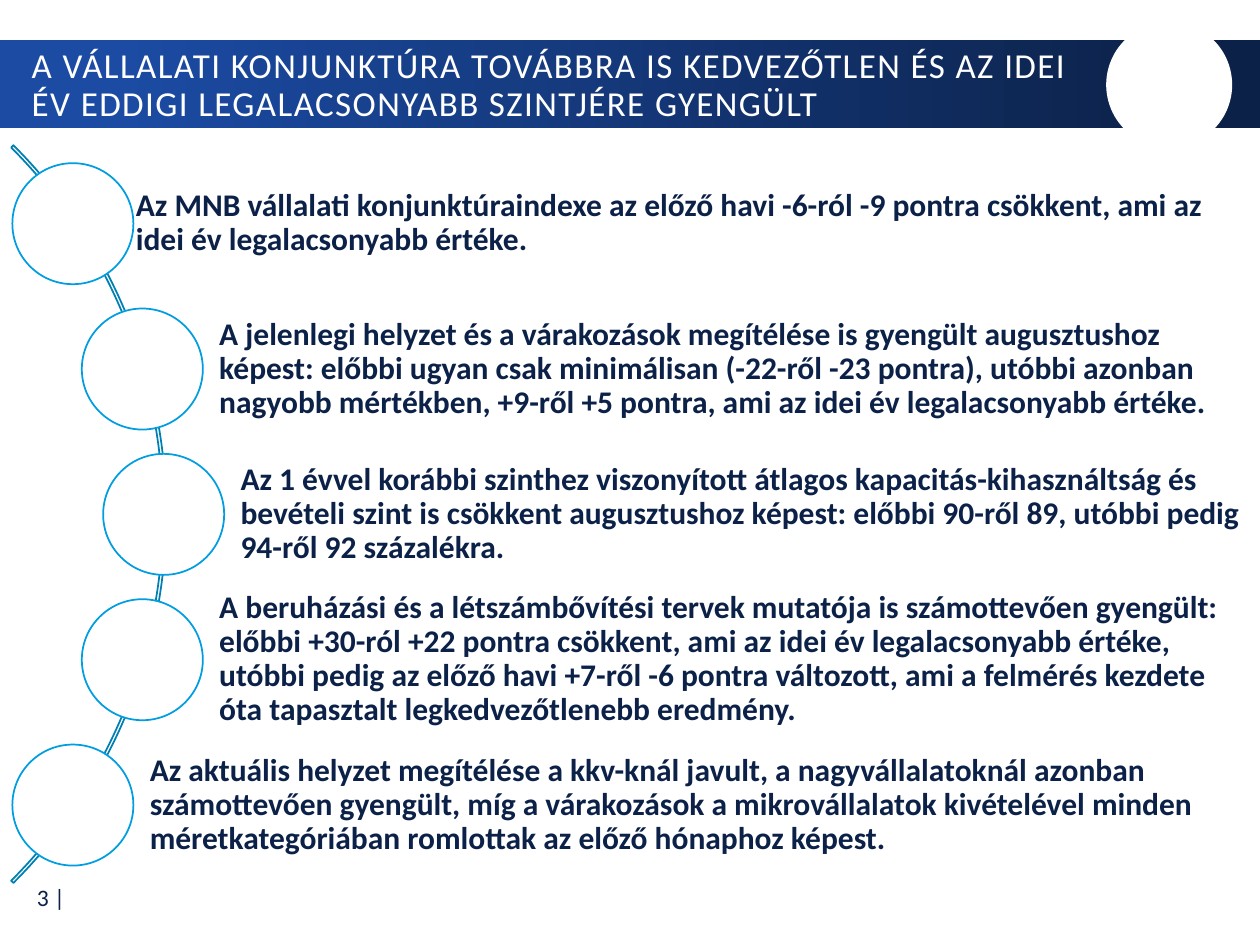
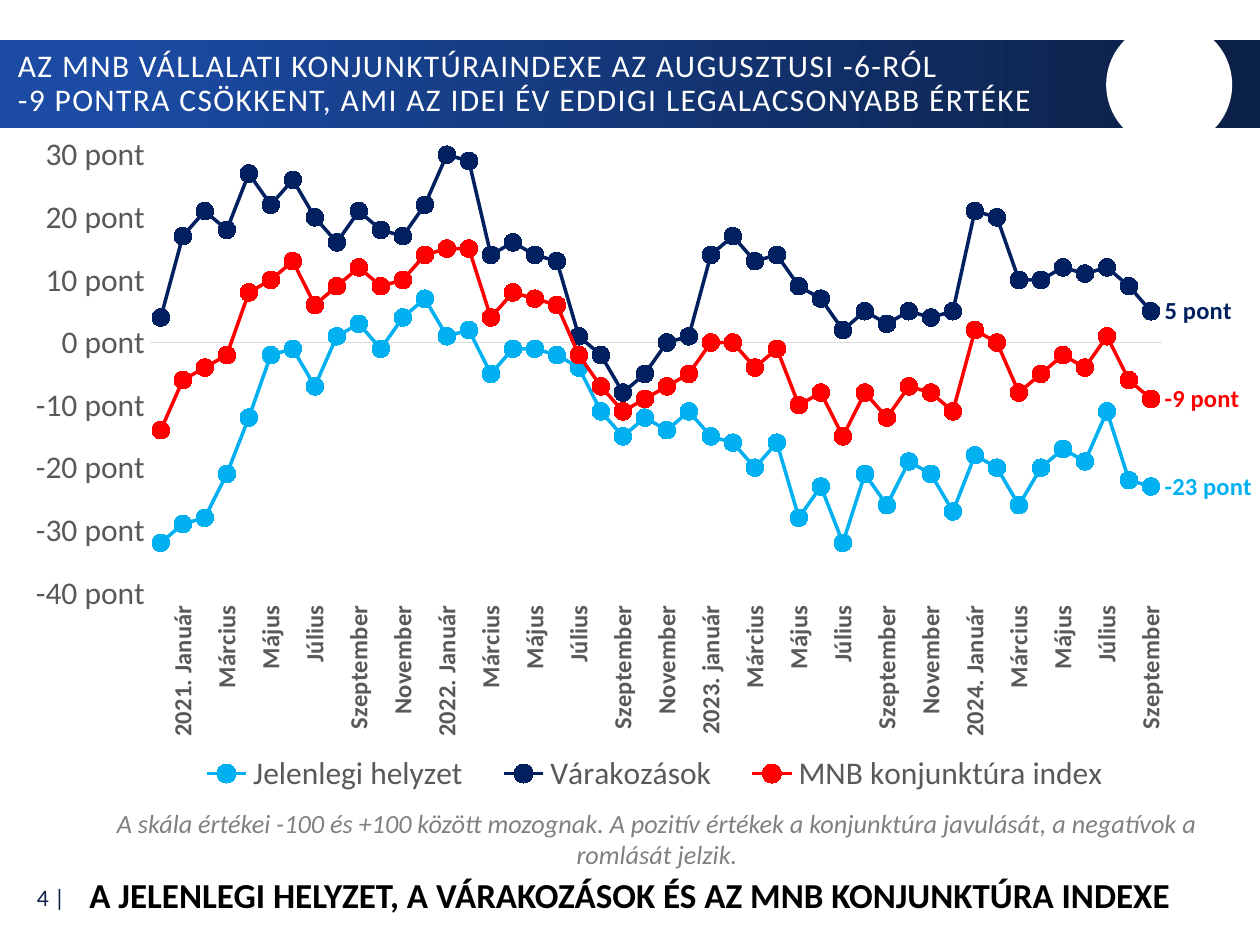
"""Build two slides on the monthly business climate index."""
import lxml.etree
import pptx
import pptx.chart.data
import pptx.dml.color
import pptx.enum.chart
import pptx.enum.shapes
import pptx.enum.text
import pptx.oxml.ns
import pptx.util

Cm, Pt = pptx.util.Cm, pptx.util.Pt
RGBColor = pptx.dml.color.RGBColor
MSO_SHAPE = pptx.enum.shapes.MSO_SHAPE
PP_ALIGN = pptx.enum.text.PP_ALIGN
qn = pptx.oxml.ns.qn

WHITE = RGBColor(0xFF, 0xFF, 0xFF)
BLACK = RGBColor(0, 0, 0)
NAVY = RGBColor(0x0C, 0x21, 0x48)
ROYAL = RGBColor(0x1B, 0x4B, 0xA3)
ARC_BLUE = RGBColor(0x00, 0x7F, 0xB3)
RING_BLUE = RGBColor(0x00, 0x9E, 0xE0)
GREY = RGBColor(0x80, 0x80, 0x80)
AXIS_TEXT = RGBColor(0x59, 0x59, 0x59)
AXIS_LINE = RGBColor(0xD9, 0xD9, 0xD9)
SKY = RGBColor(0x00, 0xB0, 0xF0)
DEEP_BLUE = RGBColor(0x00, 0x20, 0x60)
RED = RGBColor(0xFF, 0, 0)
FONT = "Calibri"

SUMMARY_TITLE = (
    "A VÁLLALATI KONJUNKTÚRA TOVÁBBRA IS KEDVEZŐTLEN ÉS AZ IDEI ÉV EDDIGI "
    "LEGALACSONYABB SZINTJÉRE GYENGÜLT")
FINDINGS = [
    "Az MNB vállalati konjunktúraindexe az előző havi -6-ról -9 pontra csökkent, "
    "ami az idei év legalacsonyabb értéke.",
    "A jelenlegi helyzet és a várakozások megítélése is gyengült augusztushoz képest: "
    "előbbi ugyan csak minimálisan (-22-ről -23 pontra), utóbbi azonban nagyobb "
    "mértékben, +9-ről +5 pontra, ami az idei év legalacsonyabb értéke.",
    "Az 1 évvel korábbi szinthez viszonyított átlagos kapacitás-kihasználtság és "
    "bevételi szint is csökkent augusztushoz képest: előbbi 90-ről 89, utóbbi pedig "
    "94-ről 92 százalékra.",
    "A beruházási és a létszámbővítési tervek mutatója is számottevően gyengült: előbbi "
    "+30-ról +22 pontra csökkent, ami az idei év legalacsonyabb értéke, utóbbi pedig az "
    "előző havi +7-ről -6 pontra változott, ami a felmérés kezdete óta tapasztalt "
    "legkedvezőtlenebb eredmény.",
    "Az aktuális helyzet megítélése a kkv-knál javult, a nagyvállalatoknál azonban "
    "számottevően gyengült, míg a várakozások a mikrovállalatok kivételével minden "
    "méretkategóriában romlottak az előző hónaphoz képest.",
]
RING_CENTERS = [1.47, 2.87, 3.3, 2.87, 1.47]
RING_TOP, RING_SIZE, RING_PITCH = 3.29, 2.44, 2.93
FINDING_HEIGHT, FINDING_RIGHT = 2.9, 25.17

INDEX_TITLE = (
    "AZ MNB VÁLLALATI KONJUNKTÚRAINDEXE AZ AUGUSZTUSI -6-RÓL\v"
    "-9 PONTRA CSÖKKENT, AMI AZ IDEI ÉV EDDIGI LEGALACSONYABB ÉRTÉKE")
INDEX_CAPTION = "A JELENLEGI HELYZET, A VÁRAKOZÁSOK ÉS AZ MNB KONJUNKTÚRA INDEXE"
SCALE_NOTE = (
    "A skála értékei -100 és +100 között mozognak. A pozitív értékek a konjunktúra "
    "javulását, a negatívok a romlását jelzik.")
LATER_MONTHS = ["Március", "Május", "Július", "Szeptember", "November"]
MONTHS = [
    "2021. Január", *LATER_MONTHS, "2022. Január", *LATER_MONTHS,
    "2023. január", *LATER_MONTHS, "2024. Január", *LATER_MONTHS[:4],
]
INDICES = [
    ("Jelenlegi helyzet", SKY, [
        -32, -29, -28, -21, -12, -2, -1, -7, 1, 3, -1, 4, 7, 1, 2, -5, -1, -1, -2, -4,
        -11, -15, -12, -14, -11, -15, -16, -20, -16, -28, -23, -32, -21, -26, -19, -21,
        -27, -18, -20, -26, -20, -17, -19, -11, -22, -23]),
    ("Várakozások", DEEP_BLUE, [
        4, 17, 21, 18, 27, 22, 26, 20, 16, 21, 18, 17, 22, 30, 29, 14, 16, 14, 13, 1,
        -2, -8, -5, 0, 1, 14, 17, 13, 14, 9, 7, 2, 5, 3, 5, 4, 5, 21, 20, 10, 10, 12,
        11, 12, 9, 5]),
    ("MNB konjunktúra index", RED, [
        -14, -6, -4, -2, 8, 10, 13, 6, 9, 12, 9, 10, 14, 15, 15, 4, 8, 7, 6, -2, -7,
        -11, -9, -7, -5, 0, 0, -4, -1, -10, -8, -15, -8, -12, -7, -8, -11, 2, 0, -8,
        -5, -2, -4, 1, -6, -9]),
]
PLOT_AREA = {"layoutTarget": "inner", "xMode": "edge", "yMode": "edge",
             "x": 0.119, "y": 0.042, "w": 0.804, "h": 0.65}
LEGEND_AREA = {"xMode": "edge", "yMode": "edge", "x": 0.14, "y": 0.92, "w": 0.76, "h": 0.08}


def lengths(*values):
    return [Cm(value) for value in values]


def style_font(font, size, color, bold=False, italic=False):
    font.name, font.size, font.bold, font.italic = FONT, Pt(size), bold, italic
    font.color.rgb = color


def write(frame, text, size, color, align=PP_ALIGN.LEFT, bold=False, italic=False,
          middle=False, line_spacing=None, tracking=None, sides=(0.25, 0.25)):
    frame.word_wrap = True
    frame.auto_size = pptx.enum.text.MSO_AUTO_SIZE.NONE
    anchors = pptx.enum.text.MSO_ANCHOR
    frame.vertical_anchor = anchors.MIDDLE if middle else anchors.TOP
    frame.margin_left, frame.margin_right = lengths(*sides)
    frame.margin_top = frame.margin_bottom = 0
    paragraph = frame.paragraphs[0]
    paragraph.text = text
    paragraph.alignment = align
    paragraph.line_spacing = line_spacing
    for run in paragraph.runs:
        style_font(run.font, size, color, bold, italic)
        if tracking:
            run.font._element.set("spc", str(tracking))


def add_box(slide, place, text, size, color, **style):
    box = slide.shapes.add_textbox(*lengths(*place))
    write(box.text_frame, text, size, color, **style)


def add_plain(slide, kind, place, fill=None, line=None):
    shape = slide.shapes.add_shape(kind, *lengths(*place))
    shape.shadow.inherit = False
    if fill is None:
        shape.fill.background()
    else:
        shape.fill.solid()
        shape.fill.fore_color.rgb = fill
    if line is None:
        shape.line.fill.background()
    else:
        shape.line.color.rgb = line
        shape.line.width = Pt(1)
    return shape


def add_page(deck, number, heading, size, place):
    slide = deck.slides.add_slide(deck.slide_layouts[5])
    add_box(slide, (0.04, 17.62, 1.52, 0.94), f"{number} |", 13.5, NAVY,
            align=PP_ALIGN.RIGHT, middle=True)
    band = add_plain(slide, MSO_SHAPE.RECTANGLE, (0, 0.81, 25.4, 1.78))
    band.fill.gradient()
    band.fill.gradient_angle = 0
    for stop, color, position in zip(band.fill.gradient_stops, (ROYAL, NAVY), (0.09, 0.95)):
        stop.color.rgb = color
        stop.position = position
    add_plain(slide, MSO_SHAPE.OVAL, (22.3, 0.44, 2.54, 2.54), WHITE)
    title = slide.shapes.title
    title.left, title.top, title.width, title.height = lengths(*place)
    write(title.text_frame, heading, size, WHITE, middle=True, line_spacing=0.9, tracking=80)
    slide.shapes._spTree.append(title._element)
    return slide


def add_findings(slide):
    arc = add_plain(slide, MSO_SHAPE.BLOCK_ARC, (-17.68, -0.15, 21.03, 21.03), line=ARC_BLUE)
    for index, value in enumerate((189, 27, 0.003)):
        arc.adjustments[index] = value
    for row, (center, finding) in enumerate(zip(RING_CENTERS, FINDINGS)):
        top = RING_TOP + row * RING_PITCH
        add_plain(slide, MSO_SHAPE.OVAL, (center - RING_SIZE / 2, top, RING_SIZE, RING_SIZE),
                  WHITE, RING_BLUE)
        inset = 1.55 if row else 1.27
        add_box(slide, (center + inset, top + (RING_SIZE - FINDING_HEIGHT) / 2,
                        FINDING_RIGHT - center - inset, FINDING_HEIGHT),
                finding, 18, NAVY, bold=True, middle=True, line_spacing=0.9, sides=(0, 0.13))


def add_layout(parent, position, settings):
    for automatic in parent.findall(qn("c:layout")):
        parent.remove(automatic)
    layout = lxml.etree.Element(qn("c:layout"))
    parent.insert(position, layout)
    manual = lxml.etree.SubElement(layout, qn("c:manualLayout"))
    for tag, value in settings.items():
        lxml.etree.SubElement(manual, qn(f"c:{tag}")).set("val", str(value))


def style_axes(chart):
    months, points = chart.category_axis, chart.value_axis
    for axis, size, bold in ((months, 14, True), (points, 18, False)):
        axis.has_major_gridlines = False
        axis.major_tick_mark = axis.minor_tick_mark = pptx.enum.chart.XL_TICK_MARK.NONE
        style_font(axis.tick_labels.font, size, AXIS_TEXT, bold)
    months.tick_label_position = pptx.enum.chart.XL_TICK_LABEL_POSITION.LOW
    months.format.line.color.rgb = AXIS_LINE
    months.format.line.width = Pt(0.75)
    months._element.find(qn("c:txPr")).find(qn("a:bodyPr")).set("rot", "-5400000")
    skip = lxml.etree.Element(qn("c:tickLblSkip"))
    skip.set("val", "1")
    months._element.find(qn("c:noMultiLvlLbl")).addprevious(skip)
    points.minimum_scale, points.maximum_scale, points.major_unit = -40, 30, 10
    points.format.line.fill.background()


def add_index_chart(slide):
    data = pptx.chart.data.CategoryChartData(number_format='General\\ "pont"')
    data.categories = [label for month in MONTHS for label in ("", month)]
    for name, _, values in INDICES:
        data.add_series(name, values)
    chart = slide.shapes.add_chart(
        pptx.enum.chart.XL_CHART_TYPE.LINE_MARKERS, *lengths(0, 2.55, 25.38, 13.59), data).chart
    chart.has_title = False
    style_font(chart.font, 18, BLACK)
    chart.has_legend = True
    chart.legend.position = pptx.enum.chart.XL_LEGEND_POSITION.BOTTOM
    chart.legend.include_in_layout = False
    style_font(chart.legend.font, 18, AXIS_TEXT)
    style_axes(chart)
    add_layout(chart._chartSpace.find(".//" + qn("c:plotArea")), 0, PLOT_AREA)
    add_layout(chart.legend._element, 1, LEGEND_AREA)
    chart.plots[0].vary_by_categories = False
    for series, (_, color, values) in zip(chart.plots[0].series, INDICES):
        series.smooth = False
        series.format.line.color.rgb = color
        series.format.line.width = Pt(2)
        series.marker.style = pptx.enum.chart.XL_MARKER_STYLE.CIRCLE
        series.marker.size = 10
        series.marker.format.fill.solid()
        series.marker.format.fill.fore_color.rgb = color
        series.marker.format.line.color.rgb = color
        latest = series.points[len(values) - 1].data_label
        style_font(latest.font, 14, color, bold=True)
        latest.position = pptx.enum.chart.XL_LABEL_POSITION.RIGHT


def main():
    deck = pptx.Presentation()
    deck.slide_width, deck.slide_height = lengths(25.4, 19.05)
    summary = add_page(deck, 3, SUMMARY_TITLE, 20, (0.39, 0.89, 22.1, 1.7))
    add_findings(summary)
    index = add_page(deck, 4, INDEX_TITLE, 18, (0.11, 0.85, 21.95, 1.7))
    add_box(index, (1.6, 17.6, 22.2, 0.95), INDEX_CAPTION, 20, BLACK,
            align=PP_ALIGN.CENTER, bold=True, sides=(0, 0))
    add_box(index, (1.65, 16.27, 23.19, 1.32), SCALE_NOTE, 15, GREY,
            align=PP_ALIGN.CENTER, italic=True)
    add_index_chart(index)
    deck.save("out.pptx")


if __name__ == "__main__":
    main()
